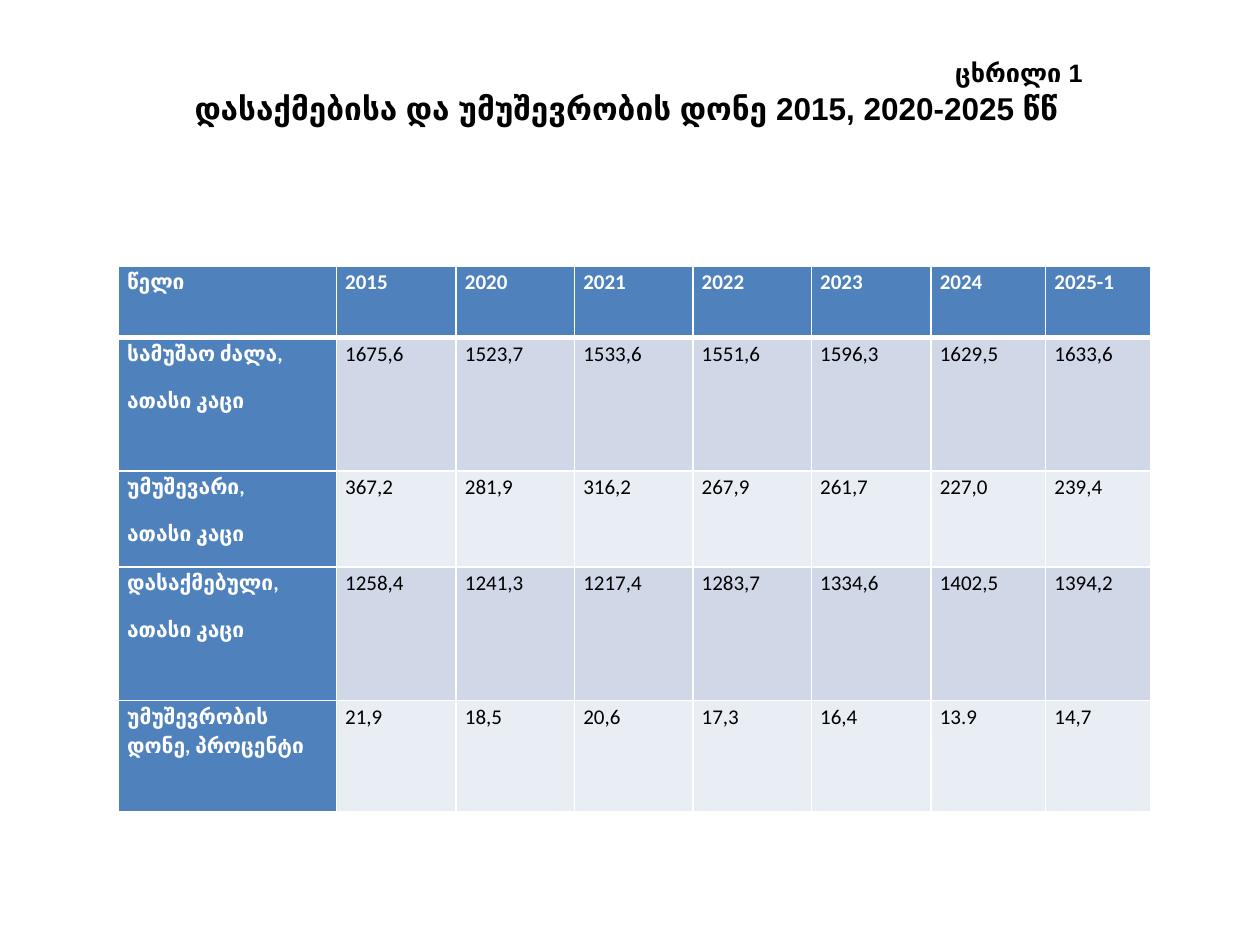
from lxml.etree import SubElement
from pptx import Presentation
from pptx.dml.color import RGBColor
from pptx.enum.text import MSO_ANCHOR, PP_ALIGN
from pptx.oxml.ns import qn
from pptx.util import Inches, Pt

YEARS = ["წელი", "2015", "2020", "2021", "2022", "2023", "2024", "2025-1"]
ROWS = [
    YEARS,
    ["სამუშაო ძალა,\nათასი კაცი", "1675,6", "1523,7", "1533,6", "1551,6", "1596,3", "1629,5", "1633,6"],
    ["უმუშევარი,\nათასი კაცი", "367,2", "281,9", "316,2", "267,9", "261,7", "227,0", "239,4"],
    ["დასაქმებული,\nათასი კაცი", "1258,4", "1241,3", "1217,4", "1283,7", "1334,6", "1402,5", "1394,2"],
    ["უმუშევრობის დონე, პროცენტი", "21,9", "18,5", "20,6", "17,3", "16,4", "13.9", "14,7"],
]
COL_WIDTHS = [1.73, 0.95, 0.94, 0.94, 0.94, 0.95, 0.91, 0.83]
ROW_HEIGHTS = [0.57, 1.06, 0.76, 1.06, 0.88]


def rgb(value):
    return RGBColor.from_string(value)


class SlideBuilder:
    HEAD_FILL = "4F81BD"
    BANDS = ("E9EDF4", "D0D8E8")
    WHITE = "FFFFFF"
    BLACK = "000000"

    def __init__(self, slide):
        self.s = slide

    def format_runs(self, p, font, size, color, bold):
        for r in p.runs:
            r.font.name = font
            r.font.size = Pt(size)
            r.font.bold = bold
            r.font.color.rgb = rgb(color)

    def heading_text(self, sp, text, size, align):
        tf = sp.text_frame
        tf.word_wrap = True
        tf.vertical_anchor = MSO_ANCHOR.TOP
        tf.text = text
        p = tf.paragraphs[0]
        p.alignment = align
        self.format_runs(p, "Arial", size, self.BLACK, True)

    def title(self, text, left, top, width, height):
        sp = self.s.shapes.title
        sp.left, sp.top, sp.width, sp.height = map(Inches, (left, top, width, height))
        sp.text_frame.margin_top = Inches(0.4)
        self.heading_text(sp, text, 18, PP_ALIGN.CENTER)

    def label(self, text, left, top, width, height):
        sp = self.s.shapes.add_textbox(*map(Inches, (left, top, width, height)))
        self.heading_text(sp, text, 14.4, PP_ALIGN.RIGHT)

    def border(self, cell, side, width):
        ln = SubElement(cell._tc.get_or_add_tcPr(), qn(f"a:ln{side}"), w=str(Pt(width)))
        fill = SubElement(ln, qn("a:solidFill"))
        SubElement(fill, qn("a:srgbClr"), val=self.WHITE)

    def cell(self, cell, text, row, col):
        is_head = row == 0 or col == 0
        # The rule under the header row is shared with the top of the first data row.
        thick = {(0, "B"), (1, "T")}
        for side in "LRTB":
            self.border(cell, side, 3 if (row, side) in thick else 1)
        cell.fill.solid()
        cell.fill.fore_color.rgb = rgb(self.HEAD_FILL if is_head else self.BANDS[row % 2])
        cell.margin_left = cell.margin_right = Inches(0.07)
        cell.margin_top = cell.margin_bottom = 0
        cell.text_frame.text = text
        for p in cell.text_frame.paragraphs:
            p.line_spacing = 1.15
            p.space_after = Pt(10)
            self.format_runs(p, "Calibri", 12, self.WHITE if is_head else self.BLACK, is_head)

    def table(self, rows, left, top, col_widths, row_heights):
        frame = self.s.shapes.add_table(
            len(rows), len(col_widths), Inches(left), Inches(top),
            Inches(sum(col_widths)), Inches(sum(row_heights)))
        table = frame.table
        for column, width in zip(table.columns, col_widths):
            column.width = Inches(width)
        for row, height in zip(table.rows, row_heights):
            row.height = Inches(height)
        for i, values in enumerate(rows):
            for j, text in enumerate(values):
                self.cell(table.cell(i, j), text, i, j)


def main():
    prs = Presentation()
    prs.slide_width, prs.slide_height = Inches(10), Inches(7.5)
    builder = SlideBuilder(prs.slides.add_slide(prs.slide_layouts[5]))
    builder.title("დასაქმებისა და უმუშევრობის დონე 2015, 2020-2025 წწ", 0.47, 0.31, 9, 1.33)
    builder.label("ცხრილი 1", 6.69, 0.41, 2, 0.34)
    builder.table(ROWS, 0.94, 2.11, COL_WIDTHS, ROW_HEIGHTS)
    prs.save("out.pptx")


if __name__ == "__main__":
    main()
